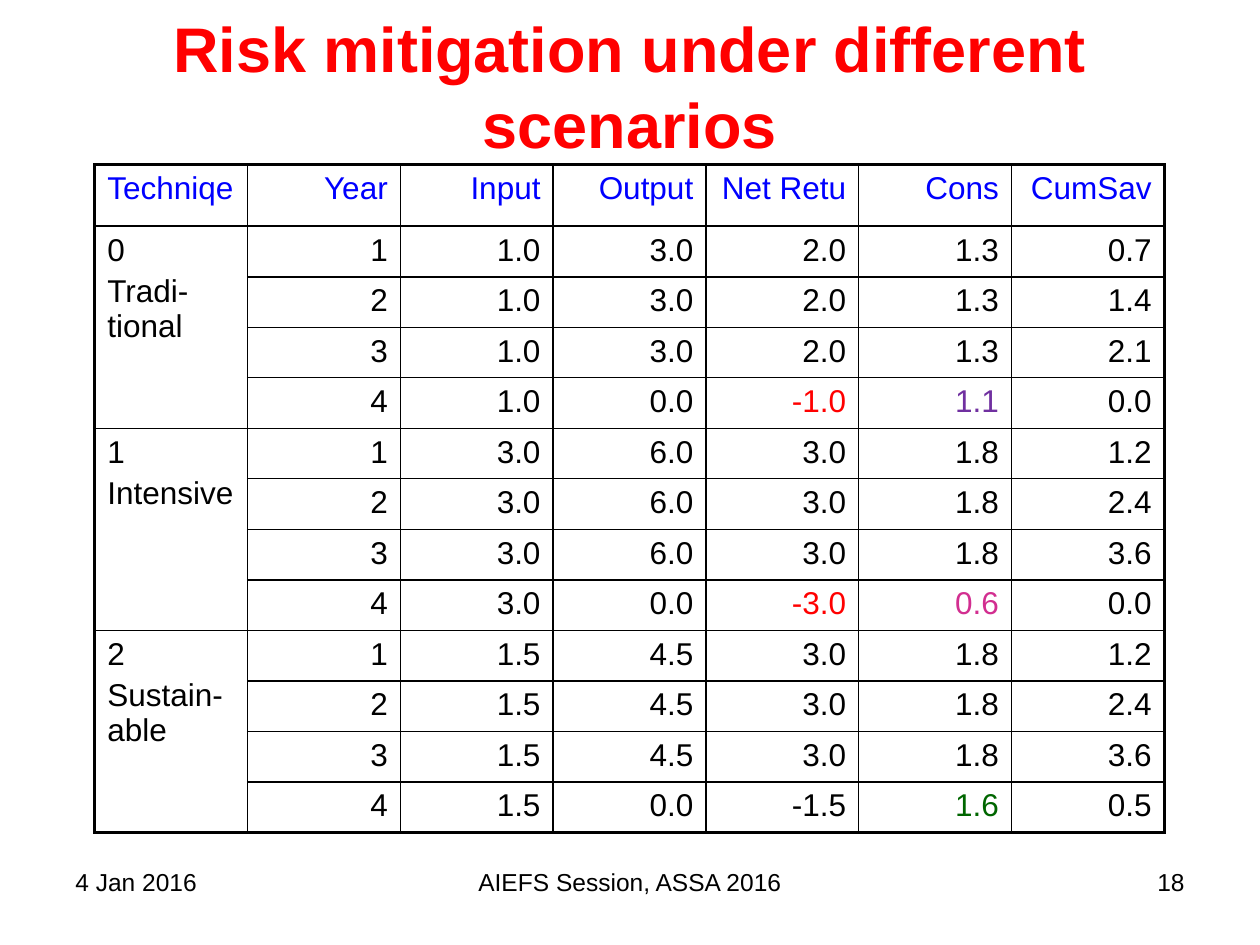
from dataclasses import dataclass

from lxml import etree
from pptx import Presentation
from pptx.dml.color import RGBColor
from pptx.enum.text import MSO_ANCHOR, PP_ALIGN
from pptx.oxml.ns import qn
from pptx.util import Cm, Pt

LEFT, MID, RIGHT = PP_ALIGN.LEFT, PP_ALIGN.CENTER, PP_ALIGN.RIGHT
TOP, CENTER = MSO_ANCHOR.TOP, MSO_ANCHOR.MIDDLE


@dataclass(frozen=True)
class Theme:
    font: str = "Arial"
    ink: str = "000000"
    red: str = "FF0000"
    blue: str = "0000FF"
    purple: str = "7030A0"
    pink: str = "D22E90"
    green: str = "006600"
    title: int = 36
    body: int = 18
    foot: int = 14
    thin: float = 1
    thick: float = 2.25
    gap: float = 3.6


THEME = Theme()
SPAN = 4  # years per technique
HEADS = ["Techniqe", "Year", "Input", "Output", "Net Retu", "Cons", "CumSav"]
GROUPS = [
    (["0", "Tradi-tional"], [
        "1.0 3.0 2.0 1.3 0.7",
        "1.0 3.0 2.0 1.3 1.4",
        "1.0 3.0 2.0 1.3 2.1",
        "1.0 0.0 -1.0 1.1 0.0"]),
    (["1", "Intensive"], [
        "3.0 6.0 3.0 1.8 1.2",
        "3.0 6.0 3.0 1.8 2.4",
        "3.0 6.0 3.0 1.8 3.6",
        "3.0 0.0 -3.0 0.6 0.0"]),
    (["2", "Sustain-able"], [
        "1.5 4.5 3.0 1.8 1.2",
        "1.5 4.5 3.0 1.8 2.4",
        "1.5 4.5 3.0 1.8 3.6",
        "1.5 0.0 -1.5 1.6 0.5"]),
]
TINTS = {  # (row, column) of the values that stand out
    (4, 4): THEME.red, (4, 5): THEME.purple,
    (8, 4): THEME.red, (8, 5): THEME.pink,
    (12, 5): THEME.green,
}
TALL, SHORT = Cm(1.02), Cm(0.86)
ROWS = [Cm(1.24), TALL, SHORT, SHORT, TALL, SHORT, TALL,
        SHORT, SHORT, TALL, SHORT, TALL, SHORT]


def apply(item, form):
    for name, value in form.items():
        setattr(item, name, value)


def write(frame, lines, size, color=THEME.ink, align=LEFT, bold=False):
    form = {"name": THEME.font, "size": Pt(size), "bold": bold}
    for i, line in enumerate(lines):
        para = frame.add_paragraph() if i else frame.paragraphs[0]
        para.alignment = align
        if i:
            para.space_before = Pt(THEME.gap)
        run = para.add_run()
        run.text = line
        apply(run.font, form)
        run.font.color.rgb = RGBColor.from_string(color)


def add_text(slide, text, box, size, anchor=TOP, **form):
    frame = slide.shapes.add_textbox(*map(Cm, box)).text_frame
    apply(frame, {"word_wrap": True, "vertical_anchor": anchor})
    write(frame, [text], size, **form)


def add_edge(cell, side, width):
    line = etree.SubElement(cell._tc.get_or_add_tcPr(), qn(f"a:ln{side}"),
                            w=str(Pt(width)))
    fill = etree.SubElement(line, qn("a:solidFill"))
    etree.SubElement(fill, qn("a:srgbClr"), val=THEME.ink)


def frame_cell(cell, row, col):
    """Thick lines around the table, thin ones inside, none within a span."""
    last = row + SPAN - 1 if cell.is_merge_origin else row
    outer = {"L": col == 0, "R": col == len(HEADS) - 1,
             "T": row == 0, "B": last == len(ROWS) - 1}
    for side, thick in outer.items():
        inside = side == "T" or (side == "B" and row % SPAN)
        if cell.is_spanned and inside:
            continue
        add_edge(cell, side, THEME.thick if thick else THEME.thin)
    cell.fill.background()


def add_grid(slide):
    grid = slide.shapes.add_table(len(ROWS), len(HEADS), Cm(1.91), Cm(3.32),
                                  Cm(21.59), sum(ROWS)).table
    apply(grid, {"first_row": False, "horz_banding": False})
    for row, height in zip(grid.rows, ROWS):
        row.height = height
    for col in grid.columns:
        col.width = Cm(3.08)

    for c, head in enumerate(HEADS):
        write(grid.cell(0, c).text_frame, [head], THEME.body, THEME.blue,
              RIGHT if c else LEFT)
    for g, (label, years) in enumerate(GROUPS):
        start = 1 + g * SPAN
        first = grid.cell(start, 0)
        first.merge(grid.cell(start + SPAN - 1, 0))
        write(first.text_frame, label, THEME.body)
        for y, values in enumerate(years):
            r = start + y
            for c, value in enumerate([str(y + 1), *values.split()], 1):
                write(grid.cell(r, c).text_frame, [value], THEME.body,
                      TINTS.get((r, c), THEME.ink), RIGHT)

    for r in range(len(ROWS)):
        for c in range(len(HEADS)):
            frame_cell(grid.cell(r, c), r, c)


def main():
    deck = Presentation()
    apply(deck, {"slide_width": Cm(25.4), "slide_height": Cm(19.05)})
    slide = deck.slides.add_slide(deck.slide_layouts[6])
    add_text(slide, "Risk mitigation under different scenarios",
             (1.27, 0.13, 22.86, 3.18), THEME.title, CENTER,
             color=THEME.red, align=MID, bold=True)
    add_grid(slide)
    feet = [("4 Jan 2016", 1.27, 5.92, LEFT),
            ("AIEFS Session, ASSA 2016", 8.68, 8.04, MID),
            ("18", 18.21, 5.92, RIGHT)]
    for text, left, width, align in feet:
        add_text(slide, text, (left, 17.35, width, 1.32), THEME.foot,
                 align=align)
    deck.save("out.pptx")


if __name__ == "__main__":
    main()
